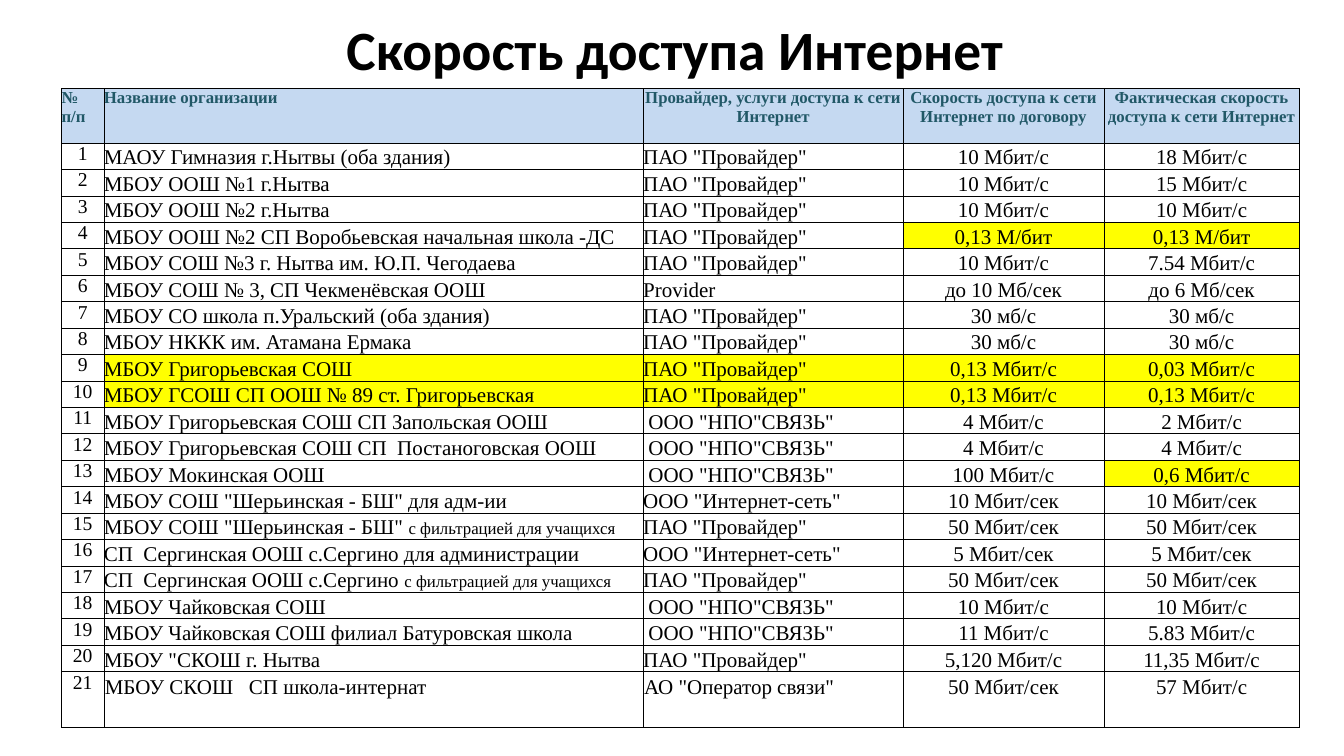
from dataclasses import dataclass

from lxml import etree
from pptx import Presentation
from pptx.dml.color import RGBColor
from pptx.enum.text import MSO_ANCHOR, MSO_AUTO_SIZE, PP_ALIGN
from pptx.oxml.ns import qn
from pptx.util import Pt

LEFT, CENTER = PP_ALIGN.LEFT, PP_ALIGN.CENTER
TOP, MIDDLE = MSO_ANCHOR.TOP, MSO_ANCHOR.MIDDLE

TITLE = "Скорость доступа Интернет"
HEADERS = [
    "№ п/п",
    "Название организации",
    "Провайдер, услуги доступа к сети Интернет",
    "Скорость доступа к сети Интернет по договору",
    "Фактическая скорость доступа к сети Интернет",
]
MAIN_PROVIDER = 'ПАО "Провайдер"'
RESEARCH_PROVIDER = ' ООО "НПО"СВЯЗЬ"'
LOCAL_PROVIDER = 'ООО "Интернет-сеть"'
FILTERED = "с фильтрацией для учащихся"

# Name, provider, contract speed, actual speed; a name in two parts ends in small type.
SCHOOLS = [
    ("МАОУ Гимназия г.Нытвы (оба здания)", MAIN_PROVIDER, "10 Мбит/с", "18 Мбит/с"),
    ("МБОУ ООШ №1 г.Нытва", MAIN_PROVIDER, "10 Мбит/с", "15 Мбит/с"),
    ("МБОУ ООШ №2 г.Нытва", MAIN_PROVIDER, "10 Мбит/с", "10 Мбит/с"),
    ("МБОУ ООШ №2 СП Воробьевская начальная школа -ДС", MAIN_PROVIDER, "0,13 М/бит", "0,13 М/бит"),
    ("МБОУ СОШ №3 г. Нытва им. Ю.П. Чегодаева", MAIN_PROVIDER, "10 Мбит/с", "7.54 Мбит/с"),
    ("МБОУ СОШ № 3, СП Чекменёвская ООШ", "Provider", "до 10 Мб/сек", "до 6 Мб/сек"),
    ("МБОУ СО школа п.Уральский (оба здания)", MAIN_PROVIDER, "30 мб/с", "30 мб/с"),
    ("МБОУ НККК им. Атамана Ермака", MAIN_PROVIDER, "30 мб/с", "30 мб/с"),
    ("МБОУ Григорьевская СОШ", MAIN_PROVIDER, "0,13 Мбит/с", "0,03 Мбит/с"),
    ("МБОУ ГСОШ СП ООШ № 89 ст. Григорьевская", MAIN_PROVIDER, "0,13 Мбит/с", "0,13 Мбит/с"),
    ("МБОУ Григорьевская СОШ СП Запольская ООШ", RESEARCH_PROVIDER, "4 Мбит/с", "2 Мбит/с"),
    ("МБОУ Григорьевская СОШ СП  Постаноговская ООШ", RESEARCH_PROVIDER, "4 Мбит/с", "4 Мбит/с"),
    ("МБОУ Мокинская ООШ", RESEARCH_PROVIDER, "100 Мбит/с", "0,6 Мбит/с"),
    ('МБОУ СОШ "Шерьинская - БШ" для адм-ии', LOCAL_PROVIDER, "10 Мбит/сек", "10 Мбит/сек"),
    (('МБОУ СОШ "Шерьинская - БШ" ', FILTERED), MAIN_PROVIDER, "50 Мбит/сек", "50 Мбит/сек"),
    ("СП  Сергинская ООШ с.Сергино для администрации", LOCAL_PROVIDER, "5 Мбит/сек", "5 Мбит/сек"),
    (("СП  Сергинская ООШ с.Сергино ", FILTERED), MAIN_PROVIDER, "50 Мбит/сек", "50 Мбит/сек"),
    ("МБОУ Чайковская СОШ", RESEARCH_PROVIDER, "10 Мбит/с", "10 Мбит/с"),
    ("МБОУ Чайковская СОШ филиал Батуровская школа", RESEARCH_PROVIDER, "11 Мбит/с", "5.83 Мбит/с"),
    ('МБОУ "СКОШ г. Нытва', MAIN_PROVIDER, "5,120 Мбит/с", "11,35 Мбит/с"),
    ("МБОУ СКОШ   СП школа-интернат", 'АО "Оператор связи"', "50 Мбит/сек", "57 Мбит/с"),
]
# School number: first highlighted column; the highlight runs to the right edge.
SLOW_FROM = {4: 3, 9: 1, 10: 1, 13: 4}

COLUMN_WIDTHS = [30.2, 385.2, 185.8, 143.3, 139.7]
HEADER_HEIGHT, ROW_HEIGHT, LAST_HEIGHT = 39, 18, 40
HEADER_ALIGN = [LEFT, LEFT, CENTER, CENTER, CENTER]
BODY_ALIGN = [CENTER, LEFT, LEFT, CENTER, CENTER]


@dataclass(frozen=True)
class Theme:
    title_font: str = "Calibri"
    table_font: str = "Times New Roman"
    ink: str = "000000"
    header_ink: str = "215867"
    header_fill: str = "C5D9F1"
    slow_fill: str = "FFFF00"
    title_size: float = 39.6
    number_size: float = 14
    body_size: float = 15
    small_size: float = 12
    border: float = 0.5
    body_spacing: float = 1.14


THEME = Theme()


def add_span(para, text, size, color, font, bold=False):
    span = para.add_run()
    span.text = text
    span.font.size = Pt(size)
    span.font.name = font
    span.font.bold = bold
    span.font.color.rgb = RGBColor.from_string(color)


def add_borders(cell):
    properties = cell._tc.get_or_add_tcPr()
    for side in ("lnL", "lnR", "lnT", "lnB"):
        line = etree.SubElement(properties, qn(f"a:{side}"), w=str(Pt(THEME.border)))
        fill = etree.SubElement(line, qn("a:solidFill"))
        etree.SubElement(fill, qn("a:srgbClr"), val=THEME.ink)


def style_cell(cell, fill=None, inset=0):
    cell.margin_left = cell.margin_right = cell.margin_top = Pt(inset)
    cell.margin_bottom = Pt(0)
    cell.vertical_anchor = TOP
    add_borders(cell)
    if fill:
        cell.fill.solid()
        cell.fill.fore_color.rgb = RGBColor.from_string(fill)
    else:
        cell.fill.background()


def add_title(page):
    box = page.shapes.title
    box.left, box.top, box.width, box.height = Pt(52.6), Pt(20.9), Pt(859), Pt(33.8)
    frame = box.text_frame
    frame.auto_size = MSO_AUTO_SIZE.NONE
    frame.word_wrap = True
    frame.vertical_anchor = MIDDLE
    para = frame.paragraphs[0]
    para.alignment = CENTER
    para.line_spacing = 0.9
    add_span(para, TITLE, THEME.title_size, THEME.ink, THEME.title_font, bold=True)


def fill_header(table):
    for column, label in enumerate(HEADERS):
        cell = table.cell(0, column)
        style_cell(cell, THEME.header_fill)
        para = cell.text_frame.paragraphs[0]
        para.alignment = HEADER_ALIGN[column]
        add_span(para, label, THEME.small_size, THEME.header_ink, THEME.table_font, bold=True)


def fill_school(table, number, school):
    first_slow = SLOW_FROM.get(number, len(HEADERS))
    for column, value in enumerate((str(number), *school)):
        cell = table.cell(number, column)
        is_number = column == 0
        inset = 0.72 if number == len(SCHOOLS) and not is_number else 0
        style_cell(cell, THEME.slow_fill if column >= first_slow else None, inset)
        para = cell.text_frame.paragraphs[0]
        para.alignment = BODY_ALIGN[column]
        if not is_number:
            para.line_spacing = THEME.body_spacing
        parts = (value,) if isinstance(value, str) else value
        sizes = (THEME.number_size if is_number else THEME.body_size, THEME.small_size)
        for text, size in zip(parts, sizes):
            add_span(para, text, size, THEME.ink, THEME.table_font)


def add_speed_table(page):
    heights = [HEADER_HEIGHT] + [ROW_HEIGHT] * (len(SCHOOLS) - 1) + [LAST_HEIGHT]
    table = page.shapes.add_table(
        len(heights), len(HEADERS), Pt(44), Pt(63.2), Pt(sum(COLUMN_WIDTHS)), Pt(sum(heights))
    ).table
    table.first_row = table.horz_banding = False
    for column, width in zip(table.columns, COLUMN_WIDTHS):
        column.width = Pt(width)
    for row, height in zip(table.rows, heights):
        row.height = Pt(height)
    fill_header(table)
    for number, school in enumerate(SCHOOLS, start=1):
        fill_school(table, number, school)


def main():
    deck = Presentation()
    deck.slide_width, deck.slide_height = Pt(960), Pt(540)
    page = deck.slides.add_slide(deck.slide_layouts[5])
    add_title(page)
    add_speed_table(page)
    deck.save("out.pptx")


if __name__ == "__main__":
    main()
